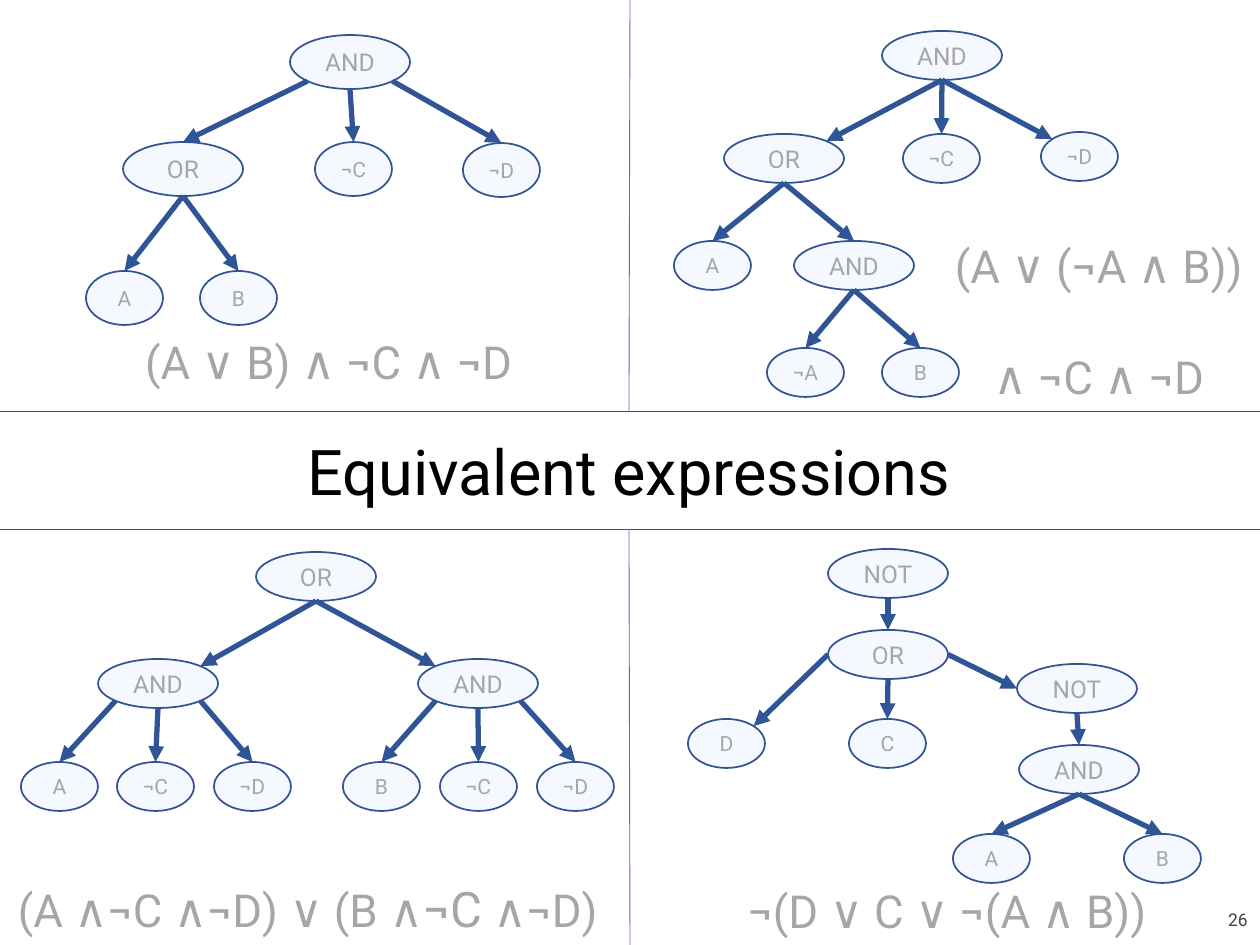
from lxml.etree import SubElement
from pptx import Presentation
from pptx.dml.color import RGBColor
from pptx.enum.shapes import MSO_CONNECTOR, MSO_SHAPE
from pptx.enum.text import MSO_ANCHOR, MSO_AUTO_SIZE, PP_ALIGN
from pptx.oxml.ns import qn
from pptx.util import Emu, Pt

PX_PER_INCH = 126
BLACK = RGBColor(0x00, 0x00, 0x00)
WHITE = RGBColor(0xFF, 0xFF, 0xFF)
DARK_GREY = RGBColor(0x40, 0x40, 0x40)
GREY = RGBColor(0xA6, 0xA6, 0xA6)
PALE_BLUE = RGBColor(0xD1, 0xE2, 0xFF)
OUTLINE_BLUE = RGBColor(0x32, 0x54, 0x91)
ARROW_BLUE = RGBColor(0x2F, 0x55, 0x97)
DIVIDER_BLUE = RGBColor(0x44, 0x72, 0xC4)

OPERATORS = ("AND", "OR", "NOT")
OPERATOR_WIDTH, LEAF_WIDTH = 120, 77
DIAGONAL = 0.5 ** 0.5
# Unit offsets from an ellipse's centre to the point where an arrow docks
DOCKS = {
    "n": (0, -1), "s": (0, 1), "w": (-1, 0), "e": (1, 0),
    "nw": (-DIAGONAL, -DIAGONAL), "ne": (DIAGONAL, -DIAGONAL),
    "sw": (-DIAGONAL, DIAGONAL), "se": (DIAGONAL, DIAGONAL),
}

# Each tree: node height, nodes as name: (label, left, top),
# and edges as (parent, dock, child, dock)
TREES = [
    (54,
     {"root": ("AND", 290, 35), "or": ("OR", 123, 142), "c": ("¬C", 315, 142),
      "d": ("¬D", 463, 143), "a": ("A", 86, 271), "b": ("B", 200, 271)},
     [("root", "se", "d", "n"), ("root", "s", "c", "n"), ("root", "sw", "or", "n"),
      ("or", "s", "a", "n"), ("or", "s", "b", "n")]),
    (49,
     {"root": ("AND", 882, 31), "or": ("OR", 724, 134), "and": ("AND", 794, 241),
      "a": ("A", 674, 241), "not a": ("¬A", 767, 348), "b": ("B", 882, 348),
      "c": ("¬C", 903, 134), "d": ("¬D", 1041, 132)},
     [("root", "s", "d", "nw"), ("root", "s", "c", "n"), ("root", "s", "or", "ne"),
      ("or", "s", "and", "n"), ("or", "s", "a", "n"),
      ("and", "s", "b", "n"), ("and", "s", "not a", "n")]),
    (49,
     {"root": ("OR", 256, 552), "left": ("AND", 98, 659), "right": ("AND", 418, 659),
      "a": ("A", 21, 762), "left c": ("¬C", 117, 762), "left d": ("¬D", 214, 762),
      "b": ("B", 343, 762), "right c": ("¬C", 440, 762), "right d": ("¬D", 537, 762)},
     [("root", "s", "left", "ne"), ("root", "s", "right", "nw"),
      ("left", "sw", "a", "n"), ("left", "s", "left c", "n"), ("left", "se", "left d", "n"),
      ("right", "sw", "b", "n"), ("right", "s", "right c", "n"),
      ("right", "se", "right d", "n")]),
    (49,
     {"root": ("NOT", 828, 549), "or": ("OR", 828, 630), "d": ("D", 688, 719),
      "c": ("C", 849, 719), "not": ("NOT", 1017, 664), "and": ("AND", 1019, 745),
      "a": ("A", 953, 834), "b": ("B", 1124, 834)},
     [("root", "s", "or", "n"), ("or", "w", "d", "ne"), ("or", "s", "c", "n"),
      ("or", "e", "not", "w"), ("not", "s", "and", "n"),
      ("and", "s", "a", "n"), ("and", "s", "b", "n")]),
]

# Each formula: box, then lines made of (text, size) runs
FORMULAS = [
    ((26, 328, 606, 68), [[("(A ∨ B) ∧ ¬C ∧ ¬D", 26)]]),
    ((-8, 872, 643, 72), [[("(A ∧¬C ∧¬D) ∨ (B ∧", 26), ("¬C", 28), (" ∧¬D) ", 26)]]),
    ((650, 877, 606, 68), [[("¬(D ∨ C ∨ ¬(A ∧ B)) ", 26)]]),
    ((941, 232, 316, 123), [[("(A ∨ (¬A ∧ B))", 26)], [("∧ ¬C ∧ ¬D", 26)]]),
]


def px(length):
    return Emu(round(length * 914400 / PX_PER_INCH))


class SlideBuilder:
    font_name = "Roboto"

    def __init__(self, slide):
        self.slide = slide

    def fill_text(self, shape, lines, color, align=PP_ALIGN.CENTER,
                  anchor=MSO_ANCHOR.MIDDLE, gap=0):
        frame = shape.text_frame
        frame_format = {"word_wrap": True, "auto_size": MSO_AUTO_SIZE.NONE,
                        "vertical_anchor": anchor}
        for name, value in frame_format.items():
            setattr(frame, name, value)
        for index, runs in enumerate(lines):
            paragraph = frame.add_paragraph() if index else frame.paragraphs[0]
            paragraph.alignment = align
            if index:
                paragraph.space_before = Pt(gap)
            for text, size in runs:
                run = paragraph.add_run()
                run.text = text
                for name, value in {"name": self.font_name, "size": Pt(size)}.items():
                    setattr(run.font, name, value)
                run.font.color.rgb = color

    def paint(self, shape, fill, line, width):
        shape.fill.solid()
        shape.fill.fore_color.rgb = fill
        shape.line.color.rgb = line
        shape.line.width = Pt(width)

    def title(self, text, box):
        shape = self.slide.shapes.title
        for name, value in zip(("left", "top", "width", "height"), box):
            setattr(shape, name, px(value))
        self.paint(shape, WHITE, OUTLINE_BLUE, 0.5)
        self.fill_text(shape, [[(text, 36)]], BLACK)

    def text(self, box, lines, color, **layout):
        shape = self.slide.shapes.add_textbox(*map(px, box))
        self.fill_text(shape, lines, color, **layout)

    def line(self, start, end, color, width, arrow=False):
        connector = self.slide.shapes.add_connector(
            MSO_CONNECTOR.STRAIGHT, *map(px, (*start, *end)))
        connector.line.color.rgb = color
        connector.line.width = Pt(width)
        properties = connector._element.spPr
        if arrow:
            SubElement(properties.find(qn("a:ln")), qn("a:tailEnd"), type="triangle")
        SubElement(properties, qn("a:effectLst"))

    def node(self, label, box):
        shape = self.slide.shapes.add_shape(MSO_SHAPE.OVAL, *map(px, box))
        shape.shadow.inherit = False
        self.paint(shape, PALE_BLUE, OUTLINE_BLUE, 1)
        fill_color = shape._element.spPr.find(qn("a:solidFill"))[0]
        SubElement(fill_color, qn("a:alpha"), val="20000")
        for side in ("left", "right", "top", "bottom"):
            setattr(shape.text_frame, f"margin_{side}", 0)
        self.fill_text(shape, [[(label, 14 if label in OPERATORS else 12)]], GREY)

    def tree(self, height, nodes, edges):
        boxes = {}
        for name, (label, left, top) in nodes.items():
            width = OPERATOR_WIDTH if label in OPERATORS else LEAF_WIDTH
            boxes[name] = (left, top, width, height)
            self.node(label, boxes[name])

        def dock_point(name, dock):
            left, top, width, height = boxes[name]
            across, down = DOCKS[dock]
            return left + width / 2 * (1 + across), top + height / 2 * (1 + down)

        for parent_node, parent_dock, child, child_dock in edges:
            self.line(dock_point(parent_node, parent_dock), dock_point(child, child_dock),
                      ARROW_BLUE, 3, arrow=True)


def main():
    presentation = Presentation()
    presentation.slide_width, presentation.slide_height = px(1260), px(945)
    builder = SlideBuilder(presentation.slides.add_slide(presentation.slide_layouts[5]))

    # Title band and the dividers above and below it
    builder.title("Equivalent expressions", (-8, 411, 1274, 118))
    builder.line((630, 0), (629, 411), DIVIDER_BLUE, 0.5)
    builder.line((629, 529), (630, 945), DIVIDER_BLUE, 0.5)

    # Formulas and their expression trees
    for box, lines in FORMULAS:
        builder.text(box, lines, GREY, anchor=MSO_ANCHOR.TOP, gap=32)
    for height, nodes, edges in TREES:
        builder.tree(height, nodes, edges)

    # Slide number
    builder.text((1188, 895, 72, 50), [[("26", 10)]], DARK_GREY, align=PP_ALIGN.RIGHT)

    presentation.save("out.pptx")


if __name__ == "__main__":
    main()
